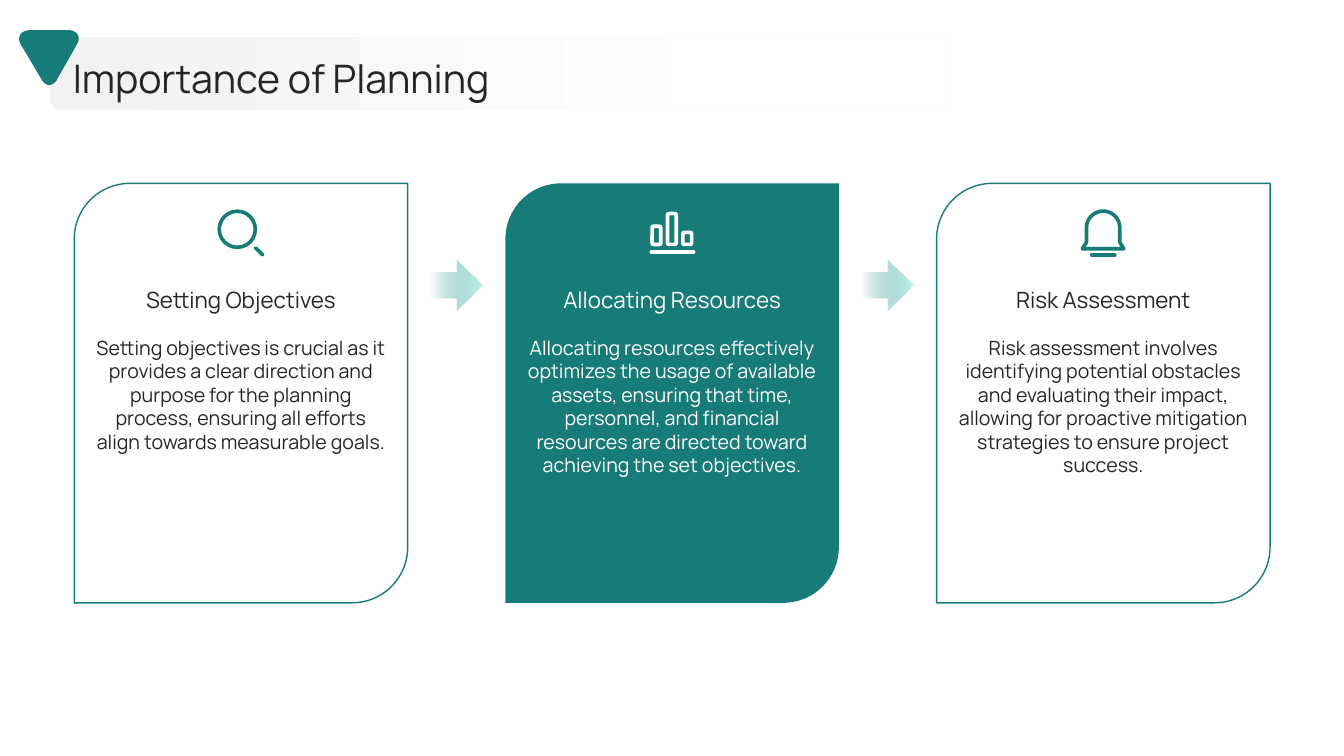
from math import cos, pi, sin

from lxml.etree import SubElement
from pptx import Presentation
from pptx.dml.color import RGBColor
from pptx.enum.shapes import MSO_CONNECTOR, MSO_SHAPE
from pptx.enum.text import MSO_ANCHOR, PP_ALIGN
from pptx.oxml.ns import qn
from pptx.util import Pt

TEAL = RGBColor(0x17, 0x7C, 0x77)
MINT = RGBColor(0xC2, 0xF4, 0xF1)
DARK = RGBColor(0x26, 0x26, 0x26)
GREY = RGBColor(0xF2, 0xF2, 0xF2)
WHITE = RGBColor(0xFF, 0xFF, 0xFF)
ICON_LINE = 2.6

prs = Presentation()
prs.slide_width, prs.slide_height = Pt(960), Pt(540)
s = prs.slides.add_slide(prs.slide_layouts[6])


def paint(sp, fill=None, line=None, width=1, gradient=None):
    """Fill and outline a shape; gradient is a list of (position, colour) stops."""
    sp.shadow.inherit = False
    if gradient:
        sp.fill.gradient()
        sp.fill.gradient_angle = 0
        for stop, (position, color) in zip(sp.fill.gradient_stops, gradient):
            stop.position, stop.color.rgb = position, color
    elif fill is not None:
        sp.fill.solid()
        sp.fill.fore_color.rgb = fill
    else:
        sp.fill.background()
    if line is not None:
        sp.line.color.rgb, sp.line.width = line, Pt(width)
    else:
        sp.line.fill.background()


def add_text(text, x, y, w, h, size, color, align, anchor):
    tf = s.shapes.add_textbox(Pt(x), Pt(y), Pt(w), Pt(h)).text_frame
    frame = dict(word_wrap=True, vertical_anchor=anchor, margin_left=0,
                 margin_top=0, margin_right=0, margin_bottom=0)
    for name, value in frame.items():
        setattr(tf, name, value)
    p = tf.paragraphs[0]
    p.alignment = align
    r = p.add_run()
    r.text = text
    for name, value in dict(name="Manrope", size=Pt(size)).items():
        setattr(r.font, name, value)
    r.font.color.rgb = color


# Header
header = s.shapes.add_shape(MSO_SHAPE.ROUNDED_RECTANGLE, Pt(36), Pt(26.7), Pt(643.7), Pt(51.6))
header.adjustments[0] = 0.14
paint(header, gradient=[(0, GREY), (0.8, WHITE)])
add_text("Importance of Planning", 52, 37, 840, 36.7, 28, DARK, PP_ALIGN.LEFT, MSO_ANCHOR.MIDDLE)

# Triangle with rounded corners: each corner is start, control, end
corners = [((50.4, 21.6), (59, 23), (55.4, 31)),
           ((40.3, 57.6), (35.3, 64.8), (30.2, 57.6)),
           ((14.4, 31), (10.8, 23), (20.2, 21.6))]
outline = []
for start, control, end in corners:
    for step in range(13):
        t = step / 12
        a, b, c = (1 - t) ** 3 + 3 * t * (1 - t) ** 2, 3 * t * t * (1 - t), t ** 3
        outline.append([Pt(a * u + b * v + c * w) for u, v, w in zip(start, control, end)])
fb = s.shapes.build_freeform(*outline[0])
fb.add_line_segments(outline[1:])
paint(fb.convert_to_shape(), TEAL)

# Cards
cards = [
    ("Setting Objectives",
     "Setting objectives is crucial as it provides a clear direction and purpose for the planning "
     "process, ensuring all efforts align towards measurable goals.",
     WHITE, TEAL, DARK),
    ("Allocating Resources",
     "Allocating resources effectively optimizes the usage of available assets, ensuring that time, "
     "personnel, and financial resources are directed toward achieving the set objectives.",
     TEAL, None, WHITE),
    ("Risk Assessment",
     "Risk assessment involves identifying potential obstacles and evaluating their impact, allowing "
     "for proactive mitigation strategies to ensure project success.",
     WHITE, TEAL, DARK),
]
for i, (title, body, fill, line, color) in enumerate(cards):
    x = 53 + 308 * i
    card = s.shapes.add_shape(MSO_SHAPE.ROUND_2_DIAG_RECTANGLE, Pt(x), Pt(131), Pt(238.2), Pt(299.6))
    paint(card, fill, line)
    add_text(title, x + 13.3, 193.7, 211.7, 41, 16, color, PP_ALIGN.CENTER, MSO_ANCHOR.MIDDLE)
    add_text(body, x + 13.3, 239.8, 211.7, 185, 14, color, PP_ALIGN.CENTER, MSO_ANCHOR.TOP)
    if i < len(cards) - 1:
        arrow = s.shapes.add_shape(MSO_SHAPE.RIGHT_ARROW, Pt(x + 254.6), Pt(185.2), Pt(36.7), Pt(36.7))
        paint(arrow, gradient=[(0, TEAL), (1, MINT)])
        first_stop = next(arrow.element.iter(qn("a:srgbClr")))
        SubElement(first_stop, qn("a:alpha")).set("val", "0")

# Magnifier ring
ring = s.shapes.add_shape(MSO_SHAPE.OVAL, Pt(156.6), Pt(150.9), Pt(25.8), Pt(25.8))
paint(ring, line=TEAL, width=ICON_LINE)

# Bar chart icon
for i, top in enumerate((161.6, 152.6, 166)):
    bar = s.shapes.add_shape(MSO_SHAPE.ROUNDED_RECTANGLE,
                             Pt(465.8 + 11 * i), Pt(top), Pt(6.2), Pt(174.6 - top))
    paint(bar, line=WHITE, width=ICON_LINE)

# Bell: a half circle on straight sides and a wider foot
cx, cy, radius = 788, 162.7, 11.9
dome = [(cx - radius * cos(pi * k / 24), cy - radius * sin(pi * k / 24)) for k in range(25)]
bell = [(cx - 14.8, 177.7), (cx - radius, 173), *dome, (cx + radius, 173), (cx + 14.8, 177.7)]
bell = [(Pt(x), Pt(y)) for x, y in bell]
fb = s.shapes.build_freeform(*bell[0])
fb.add_line_segments(bell[1:])
paint(fb.convert_to_shape(), line=TEAL, width=ICON_LINE)

# Round-ended strokes: magnifier handle, chart base line, bell clapper
strokes = [(182.5, 177, 187.5, 182, TEAL),
           (465.2, 180.2, 495.4, 180.2, WHITE),
           (779.8, 182.2, 796.3, 182.2, TEAL)]
for x1, y1, x2, y2, color in strokes:
    stroke = s.shapes.add_connector(MSO_CONNECTOR.STRAIGHT, Pt(x1), Pt(y1), Pt(x2), Pt(y2))
    stroke.line.color.rgb, stroke.line.width = color, Pt(ICON_LINE)
    stroke.get_or_add_ln().set("cap", "rnd")
    SubElement(stroke.element.spPr, qn("a:effectLst"))

prs.save("out.pptx")
